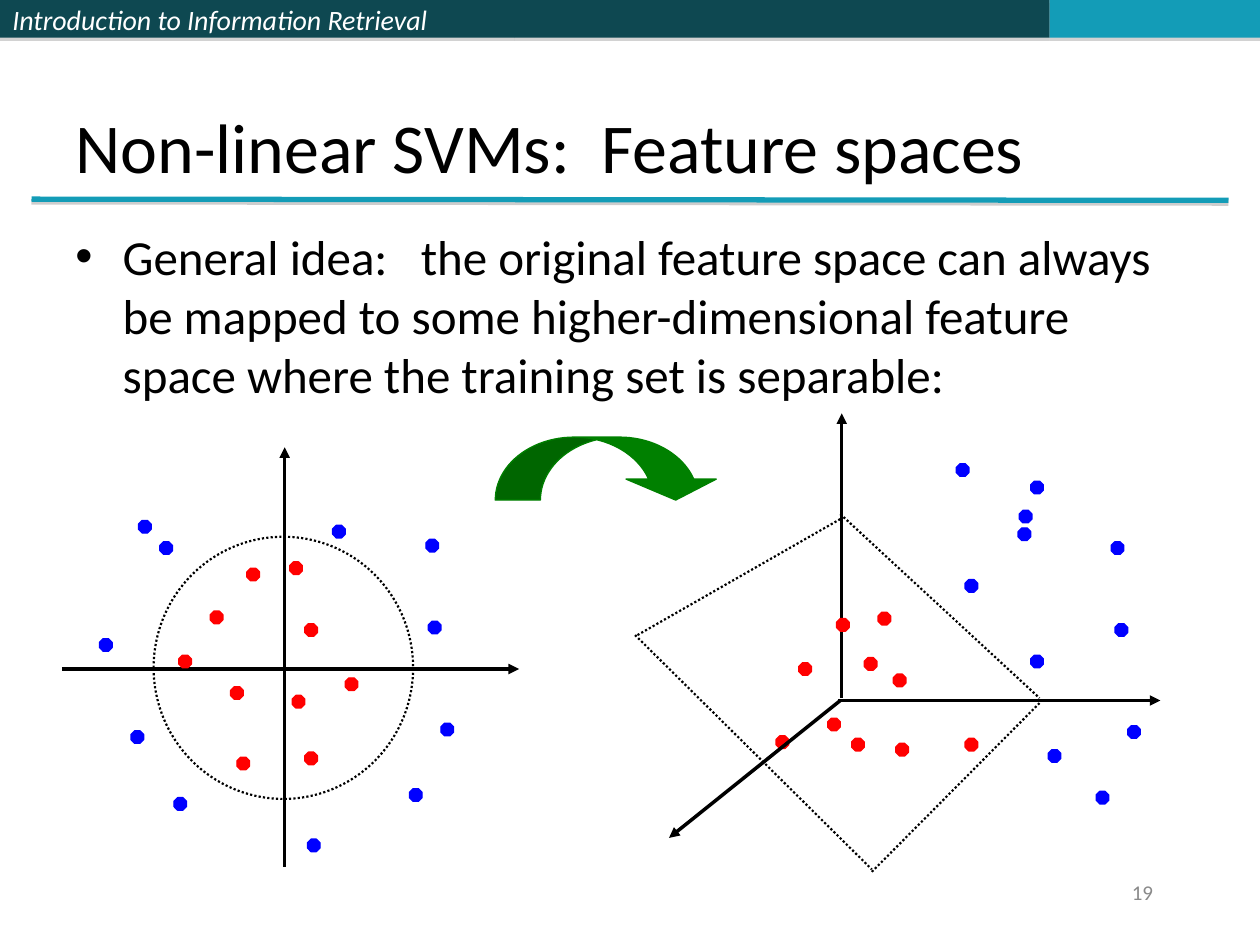
from dataclasses import dataclass
from typing import Optional

from lxml.etree import SubElement
from pptx import Presentation
from pptx.dml.color import RGBColor
from pptx.enum.dml import MSO_LINE
from pptx.enum.shapes import MSO_CONNECTOR, MSO_SHAPE
from pptx.enum.text import MSO_ANCHOR, PP_ALIGN
from pptx.oxml.ns import qn
from pptx.util import Pt


@dataclass(frozen=True)
class Theme:
    font: str = "Calibri"
    bar: str = "0E4851"
    accent: str = "139CB7"
    shadow: str = "808080"
    black: str = "000000"
    white: str = "FFFFFF"
    number: str = "898989"
    inner: str = "FF0000"
    outer: str = "0000FF"
    arrow: str = "008000"
    title_size: float = 40
    body_size: float = 28
    header_size: float = 16
    number_size: float = 12
    rule_width: float = 3
    axis_width: float = 2
    border_width: float = 1.25
    outline_width: float = 0.75


@dataclass(frozen=True)
class Box:
    left: float
    top: float
    width: float
    height: float


@dataclass(frozen=True)
class Segment:
    start: tuple[float, float]
    end: tuple[float, float]


@dataclass(frozen=True)
class Cluster:
    color: str
    corners: tuple[tuple[float, float], ...]


THEME = Theme()
DOT_SIZE = 7.2

HEADER_BARS = (
    (Box(0, 0, 293.8, 21.6), THEME.bar),
    (Box(293.8, 0, 306, 21.6), THEME.bar),
    (Box(599.8, 0, 120.2, 21.6), THEME.accent),
)

PLANE_AXES = (
    Segment((162.7, 495.4), (162.7, 255.6)),
    Segment((35.3, 382.3), (296.6, 382.3)),
)
SPACE_AXES = (
    Segment((481, 398.9), (481, 236.2)),
    Segment((478.8, 400.3), (663.1, 400.3)),
)
DEPTH_AXIS = Segment((480.2, 400.3), (382.3, 478.8))
SEPARATING_PLANE = (
    Segment((480.2, 293.8), (594, 398.9)),
    Segment((498.2, 498.2), (594, 401.8)),
    Segment((364.3, 362.9), (480.2, 296.6)),
    Segment((362.9, 362.9), (498.2, 496.8)),
)

PLANE_CLUSTERS = (
    Cluster(THEME.inner, (
        (165.6, 321.1), (120.2, 349.2), (131.8, 392.4), (174.2, 429.8), (141.1, 324.7),
        (102.2, 374.4), (135.4, 432.7), (174.2, 356.4), (197.3, 387.4), (167, 397.4),
    )),
    Cluster(THEME.outer, (
        (244.8, 355), (234, 450.7), (56.9, 365), (175.7, 479.5), (252, 413.3), (99.4, 455.8),
        (74.9, 417.6), (79.2, 297.4), (190.1, 300.2), (91.4, 309.6), (243.4, 308.2),
    )),
)
SPACE_CLUSTERS = (
    Cluster(THEME.inner, (
        (501.8, 349.9), (456.5, 378.7), (486.7, 421.9), (551.5, 421.9), (478.1, 353.5),
        (493.9, 375.8), (511.9, 424.8), (510.5, 385.2), (473, 410.4), (443.5, 420.5),
    )),
    Cluster(THEME.outer, (
        (637.2, 356.4), (626.4, 452.2), (589, 275), (589, 374.4), (644.4, 414.7), (551.5, 331.2),
        (599, 428.4), (582.5, 291.6), (581.8, 301.7), (546.5, 265), (635, 309.6),
    )),
)


def add_shadow(effects, distance: float, opacity: int) -> None:
    shadow = SubElement(effects, qn("a:outerShdw"), blurRad="0", dist=str(Pt(distance)),
                        dir="5400000", rotWithShape="0")
    color = SubElement(shadow, qn("a:srgbClr"), val=THEME.shadow)
    SubElement(color, qn("a:alpha"), val=str(opacity * 1000))


def draw_shape(page, kind: MSO_SHAPE, box: Box, *, fill: Optional[str] = None,
               line: Optional[str] = None, width: float = THEME.outline_width,
               dash: Optional[MSO_LINE] = None, adjustments: tuple[float, ...] = ()):
    shape = page.shapes.add_shape(kind, Pt(box.left), Pt(box.top), Pt(box.width), Pt(box.height))
    for index, value in enumerate(adjustments):
        shape.adjustments[index] = value
    if fill:
        shape.fill.solid()
        shape.fill.fore_color.rgb = RGBColor.from_string(fill)
    else:
        shape.fill.background()
    if line:
        shape.line.color.rgb = RGBColor.from_string(line)
        shape.line.width = Pt(width)
        if dash:
            shape.line.dash_style = dash
    else:
        shape.line.fill.background()
    shape.shadow.inherit = False
    return shape


def draw_segment(page, segment: Segment, *, color: str = THEME.black,
                 width: float = THEME.axis_width, dash: Optional[MSO_LINE] = None,
                 arrow: bool = False, shadow: bool = False) -> None:
    ends = [Pt(value) for value in (*segment.start, *segment.end)]
    connector = page.shapes.add_connector(MSO_CONNECTOR.STRAIGHT, *ends)
    connector.line.color.rgb = RGBColor.from_string(color)
    connector.line.width = Pt(width)
    if dash:
        connector.line.dash_style = dash
    properties = connector._element.spPr
    if arrow:
        SubElement(properties.find(qn("a:ln")), qn("a:tailEnd"), type="triangle")
    effects = SubElement(properties, qn("a:effectLst"))
    if shadow:
        add_shadow(effects, 1.6, 38)


def draw_clusters(page, clusters: tuple[Cluster, ...]) -> None:
    for cluster in clusters:
        for left, top in cluster.corners:
            draw_shape(page, MSO_SHAPE.OCTAGON, Box(left, top, DOT_SIZE, DOT_SIZE),
                       fill=cluster.color, line=cluster.color, adjustments=(0.293,))


def write_text(shape, text: str, *, size: float, color: str = THEME.black, italic: bool = False,
               align: PP_ALIGN = PP_ALIGN.LEFT, anchor: MSO_ANCHOR = MSO_ANCHOR.MIDDLE,
               bullet: bool = False, space_before: float = 0) -> None:
    frame = shape.text_frame
    frame.word_wrap = True
    frame.vertical_anchor = anchor
    para = frame.paragraphs[0]
    para.alignment = align
    para.space_before = Pt(space_before)
    if bullet:
        properties = para._p.get_or_add_pPr()
        properties.set("marL", str(Pt(27)))
        properties.set("indent", str(Pt(-27)))
        SubElement(properties, qn("a:buFont"), typeface="Arial")
        SubElement(properties, qn("a:buChar"), char="•")
    span = para.add_run()
    span.text = text
    span.font.name = THEME.font
    span.font.size = Pt(size)
    span.font.italic = italic
    span.font.color.rgb = RGBColor.from_string(color)


def add_text(page, box: Box, text: str, **style) -> None:
    shape = page.shapes.add_textbox(Pt(box.left), Pt(box.top), Pt(box.width), Pt(box.height))
    write_text(shape, text, **style)


def main() -> None:
    deck = Presentation()
    deck.slide_width, deck.slide_height = Pt(720), Pt(540)
    page = deck.slides.add_slide(deck.slide_layouts[6])

    bars = [draw_shape(page, MSO_SHAPE.RECTANGLE, box, fill=color) for box, color in HEADER_BARS]
    for bar in bars:
        add_shadow(bar._element.spPr.find(qn("a:effectLst")), 1.8, 35)
    write_text(bars[0], "Introduction to Information Retrieval", size=THEME.header_size,
               color=THEME.white, italic=True)
    draw_segment(page, Segment((18, 113.8), (702, 114.5)), color=THEME.accent,
                 width=THEME.rule_width, shadow=True)

    add_text(page, Box(516.2, 491.8, 149.8, 36), "19", size=THEME.number_size,
             color=THEME.number, align=PP_ALIGN.RIGHT)
    add_text(page, Box(36, 7.9, 647.3, 103), "Non-linear SVMs:  Feature spaces",
             size=THEME.title_size, anchor=MSO_ANCHOR.BOTTOM)
    add_text(page, Box(36, 126, 647.3, 383.8),
             "General idea:   the original feature space can always be mapped to some "
             "higher-dimensional feature space where the training set is separable:",
             size=THEME.body_size, anchor=MSO_ANCHOR.TOP, bullet=True, space_before=7)

    for axis in PLANE_AXES:
        draw_segment(page, axis, arrow=True)
    draw_clusters(page, PLANE_CLUSTERS)
    draw_shape(page, MSO_SHAPE.OVAL, Box(87.8, 306.7, 148.3, 149.8), line=THEME.black,
               width=THEME.border_width, dash=MSO_LINE.ROUND_DOT)

    for axis in SPACE_AXES:
        draw_segment(page, axis, arrow=True)
    draw_clusters(page, SPACE_CLUSTERS)
    draw_segment(page, DEPTH_AXIS, arrow=True)
    for edge in SEPARATING_PLANE:
        draw_segment(page, edge, width=THEME.border_width, dash=MSO_LINE.ROUND_DOT)

    draw_shape(page, MSO_SHAPE.CURVED_DOWN_ARROW, Box(283, 249.8, 128.9, 36), fill=THEME.arrow,
               line=THEME.arrow, adjustments=(0.717, 1.433, 0.333))
    deck.save("out.pptx")


if __name__ == "__main__":
    main()
